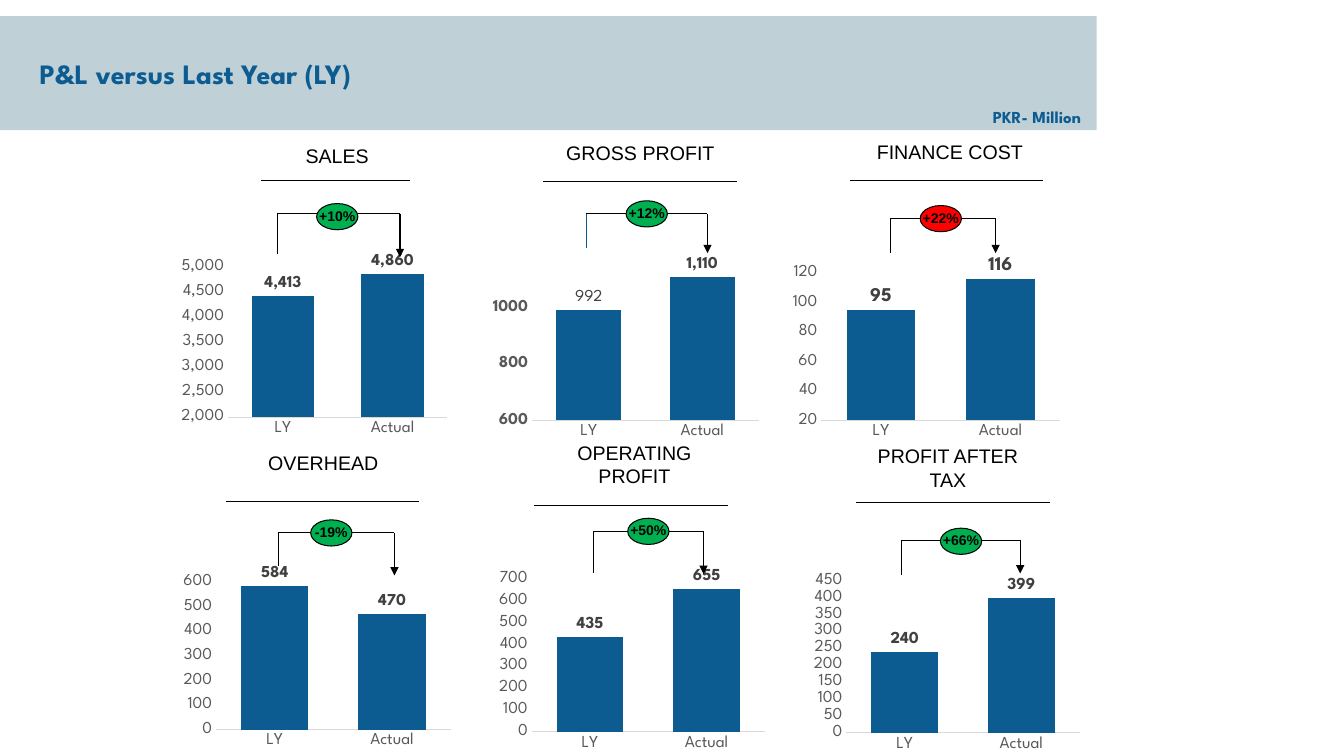
from dataclasses import dataclass

from lxml import etree
from pptx import Presentation
from pptx.chart.data import CategoryChartData
from pptx.dml.color import RGBColor
from pptx.enum.chart import XL_CHART_TYPE, XL_LABEL_POSITION, XL_TICK_MARK
from pptx.enum.shapes import MSO_CONNECTOR, MSO_SHAPE
from pptx.enum.text import MSO_ANCHOR, PP_ALIGN
from pptx.oxml import parse_xml
from pptx.oxml.ns import nsdecls, qn
from pptx.util import Cm, Pt

BLUE = RGBColor(0x0D, 0x5C, 0x91)
STEEL = RGBColor(0x09, 0x5B, 0x91)
PALE = RGBColor(0xBF, 0xD1, 0xD6)
BLACK = RGBColor(0, 0, 0)
GREY = RGBColor(0x59, 0x59, 0x59)
DARK = RGBColor(0x40, 0x40, 0x40)
LIGHT = RGBColor(0xD9, 0xD9, 0xD9)
GREEN = RGBColor(0, 0xB0, 0x50)
RED = RGBColor(0xFF, 0, 0)
COLUMN = XL_CHART_TYPE.COLUMN_CLUSTERED
ABOVE = XL_LABEL_POSITION.OUTSIDE_END
NO_TICK = XL_TICK_MARK.NONE
STRAIGHT = MSO_CONNECTOR.STRAIGHT
RECT, OVAL = MSO_SHAPE.RECTANGLE, MSO_SHAPE.OVAL
LEFT, CENTER = PP_ALIGN.LEFT, PP_ALIGN.CENTER
TOP, MIDDLE = MSO_ANCHOR.TOP, MSO_ANCHOR.MIDDLE
SPARTAN, ARIAL = "League Spartan", "Arial"
CHART_W, CHART_H = 7.0, 4.7
BADGE_W, BADGE_H = 1.04, 0.66


@dataclass
class Panel:
    """One measure; every place is in cm from the chart's top left corner."""
    name: str
    box: tuple
    values: tuple
    scale: tuple
    inner: tuple
    head: tuple
    rule: tuple
    arms: tuple
    feet: tuple
    change: str
    badge: tuple
    color: RGBColor = GREEN
    stem: RGBColor = BLACK
    format: str = "General"
    size: int = 12
    strong: bool = False
    plain: bool = False


PANELS = [
    Panel("SALES", (4.42, 6.4), (4413, 4860), (2000, 5000, 500), (0.19, 0.065),
          (1.78, -2.9), (2.16, -1.85, 3.76), (2.57, 5.66, -1.02), (0, 0.08),
          "+10%", (3.56, -1.27), format="#,##0"),
    Panel("GROSS PROFIT", (12.27, 6.48), (992, 1110), (600, 1150, 200), (0.163, 0.04),
          (1.57, -3.05), (1.42, -1.9, 4.88), (2.51, 5.56, -1.09), (-0.23, -0.1),
          "+12%", (3.51, -1.42), stem=STEEL, strong=True, plain=True),
    Panel("FINANCE COST", (19.86, 6.48), (95, 116), (20, 120, 20), (0.12, 0.08),
          (1.78, -3.07), (1.55, -1.93, 4.88), (2.57, 5.23, -0.97), (-0.1, -0.1),
          "+22%", (3.33, -1.3), color=RED, size=14),
    Panel("OVERHEAD", (4.5, 14.27), (584, 470), (0, 600, 100), (0.135, 0.08),
          (1.35, -3.02), (1.19, -1.63, 4.88), (2.51, 5.44, -0.84), (0, 0.23),
          "-19%", (3.33, -1.17)),
    Panel("OPERATING PROFIT", (12.42, 14.33), (435, 655), (0, 700, 100), (0.14, 0.055),
          (1.27, -3.35), (1.04, -1.6, 4.88), (2.54, 5.31, -0.94), (0.1, 0.13),
          "+50%", (3.4, -1.27)),
    Panel("PROFIT AFTER TAX", (20.35, 14.35), (240, 399), (0, 450, 50), (0.14, 0.06),
          (1.24, -3.28), (1.22, -1.68, 4.88), (2.36, 5.36, -0.74), (0.13, 0.1),
          "+66%", (3.35, -1.04)),
]


def style(font, size=12, color=GREY, bold=False, face=SPARTAN):
    """Set the look of a font."""
    font.size, font.bold, font.name = Pt(size), bold, face
    font.color.rgb = color


def write(frame, text, align=LEFT, anchor=TOP, wrap=True, inset=None, space=None, **look):
    """Put formatted text in a text frame."""
    frame.word_wrap, frame.vertical_anchor = wrap, anchor
    if inset:
        (frame.margin_left, frame.margin_top,
         frame.margin_right, frame.margin_bottom) = map(Cm, inset)
    para = frame.paragraphs[0]
    para.alignment = align
    if space:
        para.line_spacing = space
    run = para.add_run()
    run.text = text
    style(run.font, **look)


def label(slide, text, x, y, w, h, **look):
    """Add a text box."""
    box = slide.shapes.add_textbox(Cm(x), Cm(y), Cm(w), Cm(h))
    write(box.text_frame, text, **look)


def block(slide, kind, x, y, w, h, fill, edge=None):
    """Add a filled shape and return it."""
    shape = slide.shapes.add_shape(kind, Cm(x), Cm(y), Cm(w), Cm(h))
    shape.shadow.inherit = False
    shape.fill.solid()
    shape.fill.fore_color.rgb = fill
    if edge is None:
        shape.line.fill.background()
    else:
        shape.line.color.rgb, shape.line.width = edge, Pt(0.75)
    return shape


def stroke(slide, x1, y1, x2, y2, color=BLACK, arrow=False):
    """Draw a thin line, with an arrowhead if asked."""
    link = slide.shapes.add_connector(STRAIGHT, Cm(x1), Cm(y1), Cm(x2), Cm(y2))
    link.line.color.rgb, link.line.width = color, Pt(0.75)
    props = link._element.spPr
    if arrow:
        etree.SubElement(props.find(qn("a:ln")), qn("a:tailEnd"), type="triangle")
    etree.SubElement(props, qn("a:effectLst"))


def frame_plot(chart, x, y):
    """Fix the inner plot area, ending at one right and bottom edge."""
    area = chart._chartSpace.chart.plotArea
    for old in area.findall(qn("c:layout")):
        area.remove(old)
    sizes = {"x": x, "y": y, "w": round(0.98 - x, 3), "h": round(0.875 - y, 3)}
    parts = "".join(f'<c:{key} val="{val}"/>' for key, val in sizes.items())
    area.insert(0, parse_xml(
        f'<c:layout {nsdecls("c")}><c:manualLayout><c:layoutTarget val="inner"/>'
        f'<c:xMode val="edge"/><c:yMode val="edge"/>{parts}</c:manualLayout></c:layout>'))


def draw_chart(slide, panel):
    """Draw the columns of one panel."""
    data = CategoryChartData(number_format=panel.format)
    data.categories = ["LY", "Actual"]
    data.add_series("Series 1", panel.values)
    x, y = panel.box
    chart = slide.shapes.add_chart(
        COLUMN, Cm(x), Cm(y), Cm(CHART_W), Cm(CHART_H), data).chart
    chart.has_legend = chart.has_title = False
    style(chart.font, size=10, color=BLACK)
    frame_plot(chart, *panel.inner)
    base, side = chart.category_axis, chart.value_axis
    for axis in (base, side):
        axis.major_tick_mark = axis.minor_tick_mark = NO_TICK
        axis.has_major_gridlines = False
    style(base.tick_labels.font)
    style(side.tick_labels.font, bold=panel.strong)
    base.format.line.color.rgb, base.format.line.width = LIGHT, Pt(0.75)
    side.format.line.fill.background()
    side.minimum_scale, side.maximum_scale, side.major_unit = panel.scale
    side.tick_labels.number_format = panel.format
    side.tick_labels.number_format_is_linked = False
    plot = chart.plots[0]
    plot.gap_width, plot.vary_by_categories = 75, False
    bars = plot.series[0]
    bars.format.fill.solid()
    bars.format.fill.fore_color.rgb = BLUE
    tags = bars.data_labels
    tags.show_value, tags.position = True, ABOVE
    tags.number_format, tags.number_format_is_linked = "#,##0", False
    style(tags.font, size=panel.size, color=DARK, bold=True)
    if panel.plain:
        tag = bars.points[0].data_label
        write(tag.text_frame, str(panel.values[0]), align=CENTER, color=DARK)
        tag.position = ABOVE


def draw_panel(slide, panel):
    """Draw the chart, heading, rule and change marker of one panel."""
    draw_chart(slide, panel)
    x, y = panel.box
    dx, dy = panel.head
    label(slide, panel.name, x + dx, y + dy, 4.6, 0.9,
          align=CENTER, size=14, color=BLACK, face=ARIAL)
    dx, dy, wide = panel.rule
    stroke(slide, x + dx, y + dy, x + dx + wide, y + dy)
    start, end, level = panel.arms
    start, end, level = x + start, x + end, y + level
    low, tip = panel.feet
    dx, dy = panel.badge
    stroke(slide, start, y + low, start, level, color=panel.stem)
    stroke(slide, start, level, x + dx, level)
    stroke(slide, x + dx + BADGE_W, level, end, level)
    stroke(slide, end, level, end, y + tip, arrow=True)
    badge = block(slide, OVAL, x + dx, y + dy, BADGE_W, BADGE_H, panel.color, BLACK)
    write(badge.text_frame, panel.change, align=CENTER, anchor=MIDDLE, wrap=False,
          inset=(0, 0, 0, 0), space=0.9, size=10, color=BLACK, bold=True, face=ARIAL)


def draw_banner(slide, x, y, w, h):
    """Draw the title band with its unit note."""
    band = block(slide, RECT, x, y, w, h, PALE)
    write(band.text_frame, "P&L versus Last Year (LY)", anchor=MIDDLE,
          inset=(1, 0, 0.5, 0), size=20, color=BLUE, bold=True)
    label(slide, "PKR- Million", x + w - 2.87, y + h - 0.71, 5.26, 0.86,
          color=BLUE, bold=True)


def main():
    """Build and save the slide."""
    deck = Presentation()
    deck.slide_width, deck.slide_height = Cm(33.87), Cm(19.05)
    slide = deck.slides.add_slide(deck.slide_layouts[6])
    draw_banner(slide, 0, 0.41, 27.64, 2.87)
    for panel in PANELS:
        draw_panel(slide, panel)
    deck.save("out.pptx")


if __name__ == "__main__":
    main()
